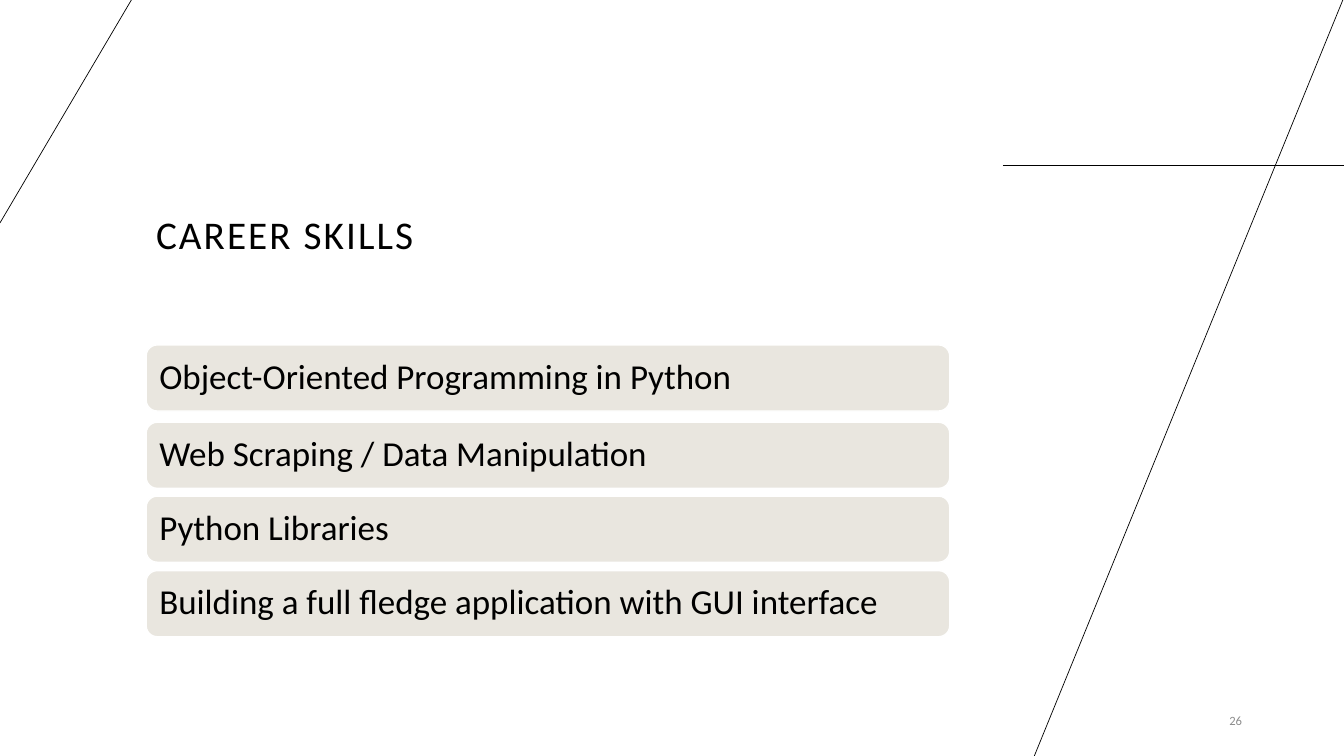
import pptx
import pptx.dml.color
import pptx.enum.shapes
import pptx.enum.text
import pptx.oxml.ns
import pptx.util
import lxml.etree

Pt = pptx.util.Pt
ALIGN = pptx.enum.text.PP_ALIGN
ANCHOR = pptx.enum.text.MSO_ANCHOR
COLOURS = {"ink": "000000", "muted": "8C8C8C", "bar": "E9E6DF", "edge": "FFFFFF"}
SLIDE_WIDTH, SLIDE_HEIGHT = 960, 540
SKILLS = {
    "Object-Oriented Programming in Python": 0,
    "Web Scraping / Data Manipulation": 55.2,
    "Python Libraries": 108,
    "Building a full fledge application with GUI interface": 161.2,
}


def colour(name):
    """Return the palette colour of that name."""
    return pptx.dml.color.RGBColor.from_string(COLOURS[name])


def apply(target, formats):
    """Set each format value on the target."""
    for attribute, value in formats.items():
        setattr(target, attribute, value)


def write(shape, wording, size, ink="ink", paragraph_format=None, frame_format=None):
    """Put one formatted line of wording in a shape and return its run."""
    frame = shape.text_frame
    apply(frame, {"word_wrap": True, "vertical_anchor": ANCHOR.MIDDLE, **(frame_format or {})})
    paragraph = frame.paragraphs[0]
    apply(paragraph, {"alignment": ALIGN.LEFT, **(paragraph_format or {})})
    run = paragraph.add_run()
    run.text = wording
    apply(run.font, {"size": Pt(size), "name": "Calibri"})
    run.font.color.rgb = colour(ink)
    return run


def draw_lines(slide, left, top, width, height):
    """Draw the thin decorative lines across the slide box."""
    right, bottom = left + width, top + height
    for ends in (
        (right - 243.6, top + 118, right, top + 118),
        (right, top - 2, right - 221.2, bottom),
        (left, top + 159.2, left + 95, top - 2),
    ):
        line = slide.shapes.add_connector(
            pptx.enum.shapes.MSO_CONNECTOR.STRAIGHT, *map(Pt, ends))
        line.line.width = Pt(0.5)
        line.line.color.rgb = colour("ink")
        lxml.etree.SubElement(line._element.spPr, pptx.oxml.ns.qn("a:effectLst"))


def draw_title(slide, left, top, width, height):
    """Set the letter-spaced title at the foot of its box."""
    title = slide.shapes.add_textbox(*map(Pt, (left, top, width, height)))
    run = write(title, "CAREER SKILLS", 28, paragraph_format={"line_spacing": 0.9},
                frame_format={"vertical_anchor": ANCHOR.BOTTOM})
    run._r.get_or_add_rPr().set("spc", "150")


def draw_page_number(slide, left, top, width, height):
    """Set the page number at the right of its box."""
    number = slide.shapes.add_textbox(*map(Pt, (left, top, width, height)))
    write(number, "26", 9, "muted", {"alignment": ALIGN.RIGHT, "space_after": Pt(6)})


def draw_skills(slide, left, top, width, bar_height):
    """Stack one rounded bar for each skill below the top of the box."""
    margins = {f"margin_{side}": Pt(7.2) for side in ("left", "top", "right", "bottom")}
    for skill, offset in SKILLS.items():
        bar = slide.shapes.add_shape(
            pptx.enum.shapes.MSO_SHAPE.ROUNDED_RECTANGLE,
            *map(Pt, (left, top + offset, width, bar_height)))
        bar.shadow.inherit = False
        bar.fill.solid()
        bar.fill.fore_color.rgb = colour("bar")
        bar.line.color.rgb = colour("edge")
        bar.line.width = Pt(1)
        write(bar, skill, 25, paragraph_format={"line_spacing": 0.9}, frame_format=margins)


def main():
    """Build the career skills slide and save it."""
    deck = pptx.Presentation()
    apply(deck, {"slide_width": Pt(SLIDE_WIDTH), "slide_height": Pt(SLIDE_HEIGHT)})
    slide = deck.slides.add_slide(deck.slide_layouts[6])
    draw_lines(slide, 0, 0, SLIDE_WIDTH, SLIDE_HEIGHT)
    draw_title(slide, 104.4, 21, 574, 167)
    draw_page_number(slide, 816.5, 500.4, 77.8, 28.8)
    draw_skills(slide, 104.4, 246.4, 574, 47.2)
    deck.save("out.pptx")


if __name__ == "__main__":
    main()
